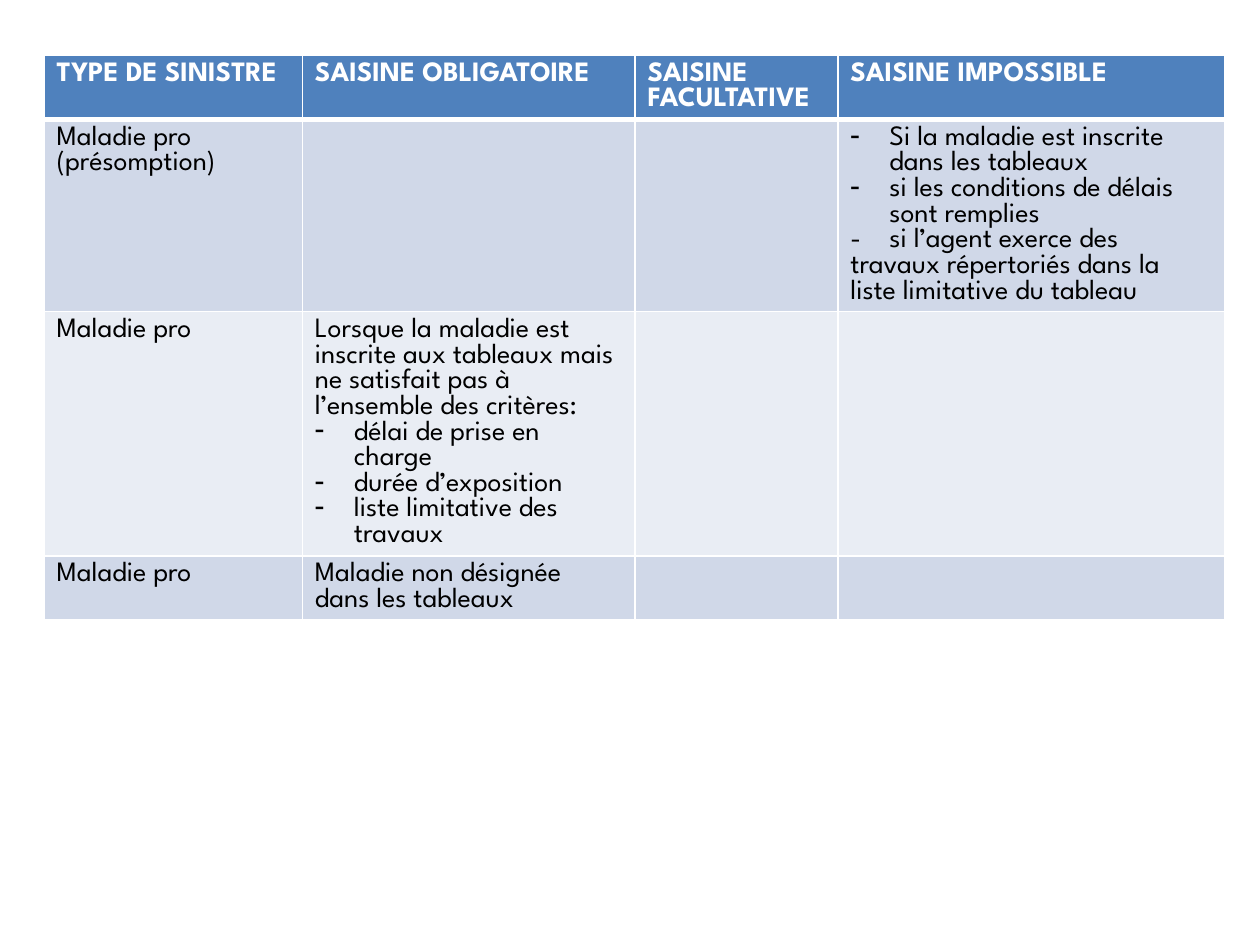
from dataclasses import dataclass

from lxml.etree import SubElement
from pptx import Presentation
from pptx.dml.color import RGBColor
from pptx.oxml.ns import qn
from pptx.util import Inches, Pt


@dataclass(frozen=True)
class Theme:
    font: str = "League Spartan"
    size: int = 16
    header_fill: str = "4F81BD"
    dark_band: str = "D0D8E8"
    light_band: str = "E9EDF4"
    header_text: str = "FFFFFF"
    body_text: str = "000000"
    border: str = "FFFFFF"


theme = Theme()
hanging = Inches(0.31)


def add_borders(cell, bottom_width):
    properties = cell._tc.get_or_add_tcPr()
    for side, width in (("L", 1), ("R", 1), ("T", 1), ("B", bottom_width)):
        line = SubElement(properties, qn(f"a:ln{side}"), w=str(Pt(width)))
        fill = SubElement(line, qn("a:solidFill"))
        SubElement(fill, qn("a:srgbClr"), val=theme.border)


def set_list_format(paragraph, text):
    """Hang "- " lines on a bullet; give lines with a tab their tab stop."""
    properties = paragraph._p.get_or_add_pPr()
    if text.startswith("- "):
        properties.set("marL", str(hanging))
        properties.set("indent", str(-hanging))
        SubElement(properties, qn("a:buChar"), char="-")
    elif "\t" in text:
        stops = SubElement(properties, qn("a:tabLst"))
        SubElement(stops, qn("a:tab"), pos=str(hanging), algn="l")


# Cell content: one list of paragraphs per cell
rows = [
    [["TYPE DE SINISTRE"], ["SAISINE OBLIGATOIRE"],
     ["SAISINE FACULTATIVE"], ["SAISINE IMPOSSIBLE"]],
    [["Maladie pro", "(présomption)"], [], [],
     ["- Si la maladie est inscrite dans les tableaux",
      "- si les conditions de délais sont remplies",
      "-\tsi l’agent exerce des travaux répertoriés dans la liste limitative du tableau"]],
    [["Maladie pro"],
     ["Lorsque la maladie est inscrite aux tableaux mais ne satisfait pas à "
      "l’ensemble des critères:",
      "- délai de prise en charge",
      "- durée d’exposition",
      "- liste limitative des travaux"], [], []],
    [["Maladie pro"], ["Maladie non désignée dans les tableaux"], [], []],
]
column_widths = [2.05, 2.64, 1.61, 3.07]
row_heights = [0.49, 1.52, 1.94, 0.51]

# Slide
presentation = Presentation()
presentation.slide_width = Inches(10)
presentation.slide_height = Inches(7.5)
slide = presentation.slides.add_slide(presentation.slide_layouts[6])

# Table grid
table = slide.shapes.add_table(
    len(rows), len(column_widths), Inches(0.35), Inches(0.44),
    Inches(sum(column_widths)), Inches(sum(row_heights))).table
for column, width in zip(table.columns, column_widths):
    column.width = Inches(width)
for row, height in zip(table.rows, row_heights):
    row.height = Inches(height)

# Cells
for row_index, row in enumerate(rows):
    is_header = row_index == 0
    band = theme.dark_band if row_index % 2 else theme.light_band
    for column_index, lines in enumerate(row):
        cell = table.cell(row_index, column_index)
        add_borders(cell, 3 if is_header else 1)
        cell.fill.solid()
        cell.fill.fore_color.rgb = RGBColor.from_string(
            theme.header_fill if is_header else band)

        for line_index, text in enumerate(lines):
            frame = cell.text_frame
            paragraph = frame.add_paragraph() if line_index else frame.paragraphs[0]
            paragraph.text = text.removeprefix("- ")
            set_list_format(paragraph, text)
            paragraph.font.name = theme.font
            paragraph.font.size = Pt(theme.size)
            paragraph.font.bold = is_header
            paragraph.font.color.rgb = RGBColor.from_string(
                theme.header_text if is_header else theme.body_text)

presentation.save("out.pptx")
